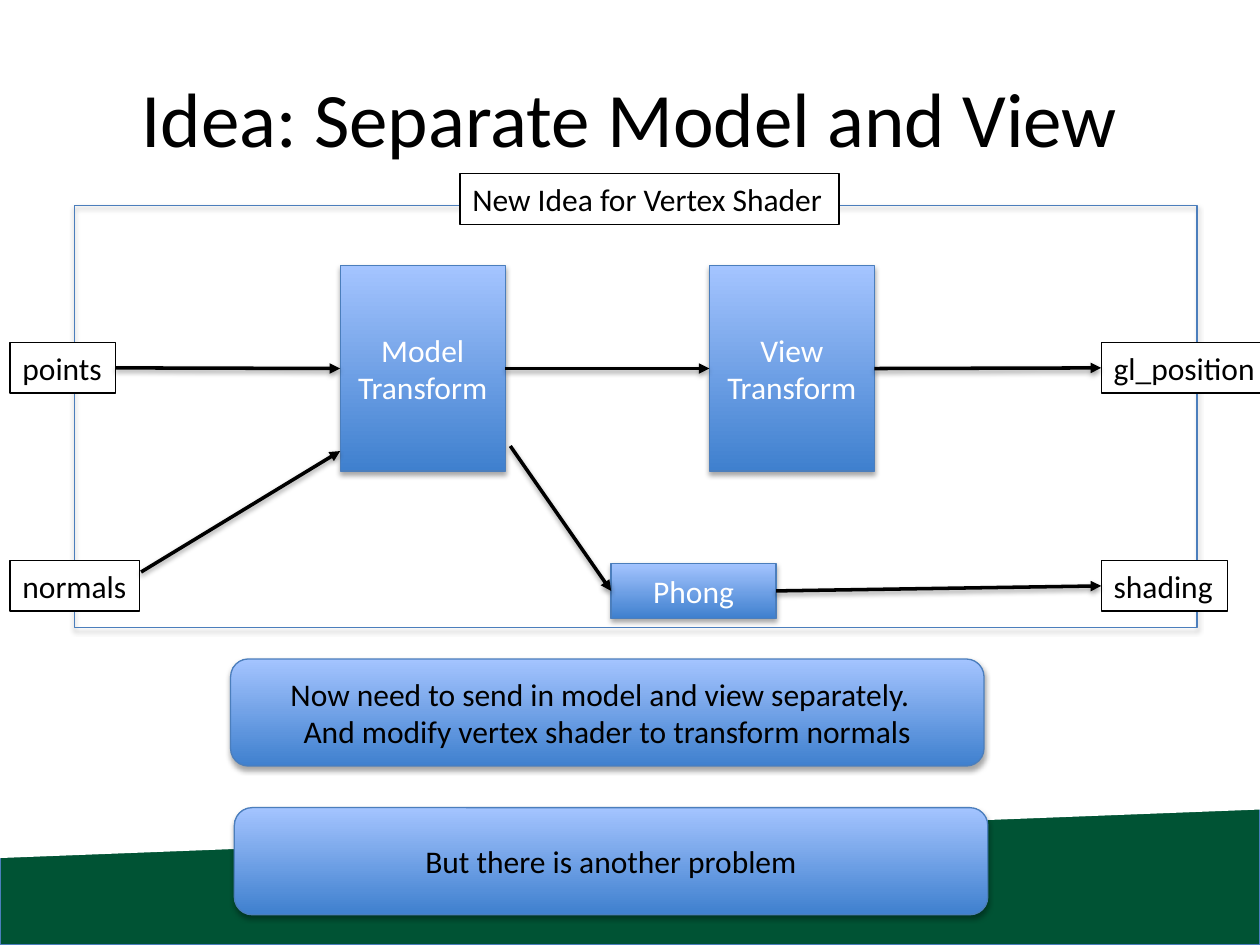
from dataclasses import dataclass

from pptx import Presentation
from pptx.dml.color import RGBColor
from pptx.enum.shapes import MSO_CONNECTOR, MSO_SHAPE
from pptx.enum.text import MSO_ANCHOR, MSO_AUTO_SIZE, PP_ALIGN
from pptx.oxml import parse_xml
from pptx.oxml.ns import nsdecls, qn
from pptx.slide import Slide
from pptx.util import Inches, Pt
from lxml.etree import SubElement

BLACK = RGBColor(0x00, 0x00, 0x00)
WHITE = RGBColor(0xFF, 0xFF, 0xFF)
GREEN = RGBColor(0x00, 0x53, 0x34)
OUTLINE = RGBColor(0x4B, 0x7E, 0xBC)
DARK_BLUE = RGBColor(0x3F, 0x80, 0xCE)
LIGHT_BLUE = RGBColor(0xA4, 0xC4, 0xFF)

RIGHT_SIDE, LEFT_SIDE = 3, 1


@dataclass
class Diagram:
    slide: Slide
    font_name: str = "Calibri"
    text_size: int = 18

    def set_text(self, shape, lines, color, alignment, size=None):
        frame = shape.text_frame
        frame.text = "\n".join(lines)
        for paragraph in frame.paragraphs:
            paragraph.alignment = alignment
            paragraph.font.name = self.font_name
            paragraph.font.size = Pt(size or self.text_size)
            paragraph.font.color.rgb = color

    def cast_shadow(self, shape, opacity, distance):
        shape._element.spPr.append(parse_xml(
            f'<a:effectLst {nsdecls("a")}>'
            f'<a:outerShdw blurRad="{Pt(3.1)}" dist="{Pt(distance)}" '
            'dir="5400000" rotWithShape="0"><a:srgbClr val="000000">'
            f'<a:alpha val="{opacity * 1000}"/></a:srgbClr>'
            '</a:outerShdw></a:effectLst>'))

    def panel(self, left, top, width, height, fill=None):
        shape = self.outlined(MSO_SHAPE.RECTANGLE, left, top, width, height)
        if fill is None:
            shape.fill.background()
        else:
            shape.fill.solid()
            shape.fill.fore_color.rgb = fill

    def outlined(self, kind, left, top, width, height):
        shape = self.slide.shapes.add_shape(
            kind, Inches(left), Inches(top), Inches(width), Inches(height))
        shape.line.color.rgb = OUTLINE
        shape.line.width = Pt(0.75)
        self.cast_shadow(shape, 35, 1.8)
        return shape

    def slant(self, left, top, width, height):
        shape = self.slide.shapes.add_shape(
            MSO_SHAPE.PARALLELOGRAM,
            Inches(left), Inches(top), Inches(width), Inches(height))
        shape.adjustments[0] = 0.166
        shape.rotation = 90
        shape._element.spPr.xfrm.set("flipH", "1")
        shape.fill.solid()
        shape.fill.fore_color.rgb = WHITE
        shape.line.fill.background()
        shape.shadow.inherit = False

    def title(self, text):
        box = self.slide.shapes.add_textbox(
            Inches(0.5), Inches(0.3), Inches(9), Inches(1.25))
        box.text_frame.word_wrap = True
        box.text_frame.vertical_anchor = MSO_ANCHOR.MIDDLE
        self.set_text(box, [text], BLACK, PP_ALIGN.CENTER, 44)

    def block(self, lines, left, top, width, height,
              kind=MSO_SHAPE.RECTANGLE, color=WHITE):
        shape = self.outlined(kind, left, top, width, height)
        shape.fill.gradient()
        shape.fill.gradient_angle = 90
        stops = shape.fill.gradient_stops
        for stop, position, shade in zip(stops, (0, 1), (DARK_BLUE, LIGHT_BLUE)):
            stop.position = position
            stop.color.rgb = shade
        shape.text_frame.vertical_anchor = MSO_ANCHOR.MIDDLE
        self.set_text(shape, lines, color, PP_ALIGN.CENTER)
        return shape

    def note(self, lines, left, top):
        self.block(lines, left, top, 5.98, 0.85,
                   MSO_SHAPE.ROUNDED_RECTANGLE, BLACK)

    def label(self, text, left, top, width):
        box = self.slide.shapes.add_textbox(
            Inches(left), Inches(top), Inches(width), Inches(0.4))
        box.fill.solid()
        box.fill.fore_color.rgb = WHITE
        box.line.color.rgb = BLACK
        box.line.width = Pt(0.75)
        box.text_frame.word_wrap = False
        box.text_frame.auto_size = MSO_AUTO_SIZE.SHAPE_TO_FIT_TEXT
        self.set_text(box, [text], BLACK, PP_ALIGN.LEFT)
        return box

    def arrow(self, source=None, target=None, start=(0, 0), end=(0, 0)):
        connector = self.slide.shapes.add_connector(
            MSO_CONNECTOR.STRAIGHT,
            *(Inches(length) for length in (*start, *end)))
        if source is not None:
            connector.begin_connect(source, RIGHT_SIDE)
        if target is not None:
            connector.end_connect(target, LEFT_SIDE)
        connector.line.color.rgb = BLACK
        connector.line.width = Pt(2)
        SubElement(connector.line._get_or_add_ln(), qn("a:tailEnd"), type="triangle")
        self.cast_shadow(connector, 38, 1.6)


def main():
    presentation = Presentation()
    presentation.slide_width = Inches(10)
    presentation.slide_height = Inches(7.5)
    diagram = Diagram(presentation.slides.add_slide(presentation.slide_layouts[6]))

    diagram.panel(0, 5.61, 10, 1.89, GREEN)
    diagram.slant(3.84, 0.65, 2.32, 10)
    diagram.title("Idea: Separate Model and View")

    model = diagram.block(["Model", "Transform"], 2.7, 2.11, 1.31, 1.63)
    view = diagram.block(["View", "Transform"], 5.63, 2.11, 1.31, 1.63)
    phong = diagram.block(["Phong"], 4.85, 4.47, 1.31, 0.44)
    diagram.panel(0.59, 1.63, 8.91, 3.35)

    points = diagram.label("points", 0.08, 2.72, 0.84)
    diagram.label("normals", 0.08, 4.45, 1.03)
    diagram.label("New Idea for Vertex Shader", 3.65, 1.38, 3.01)
    shading = diagram.label("shading", 8.74, 4.45, 1)
    position = diagram.label("gl_position", 8.74, 2.72, 1.34)

    for source, target in ((points, model), (model, view),
                           (view, position), (phong, shading)):
        diagram.arrow(source, target)
    diagram.arrow(target=phong, start=(4.05, 3.54))
    diagram.arrow(start=(1.12, 4.54), end=(2.7, 3.58))

    diagram.note(["Now need to send in model and view separately.  ",
                  "And modify vertex shader to transform normals"], 1.83, 5.23)
    diagram.note(["But there is another problem"], 1.86, 6.41)

    presentation.save("out.pptx")


if __name__ == "__main__":
    main()
